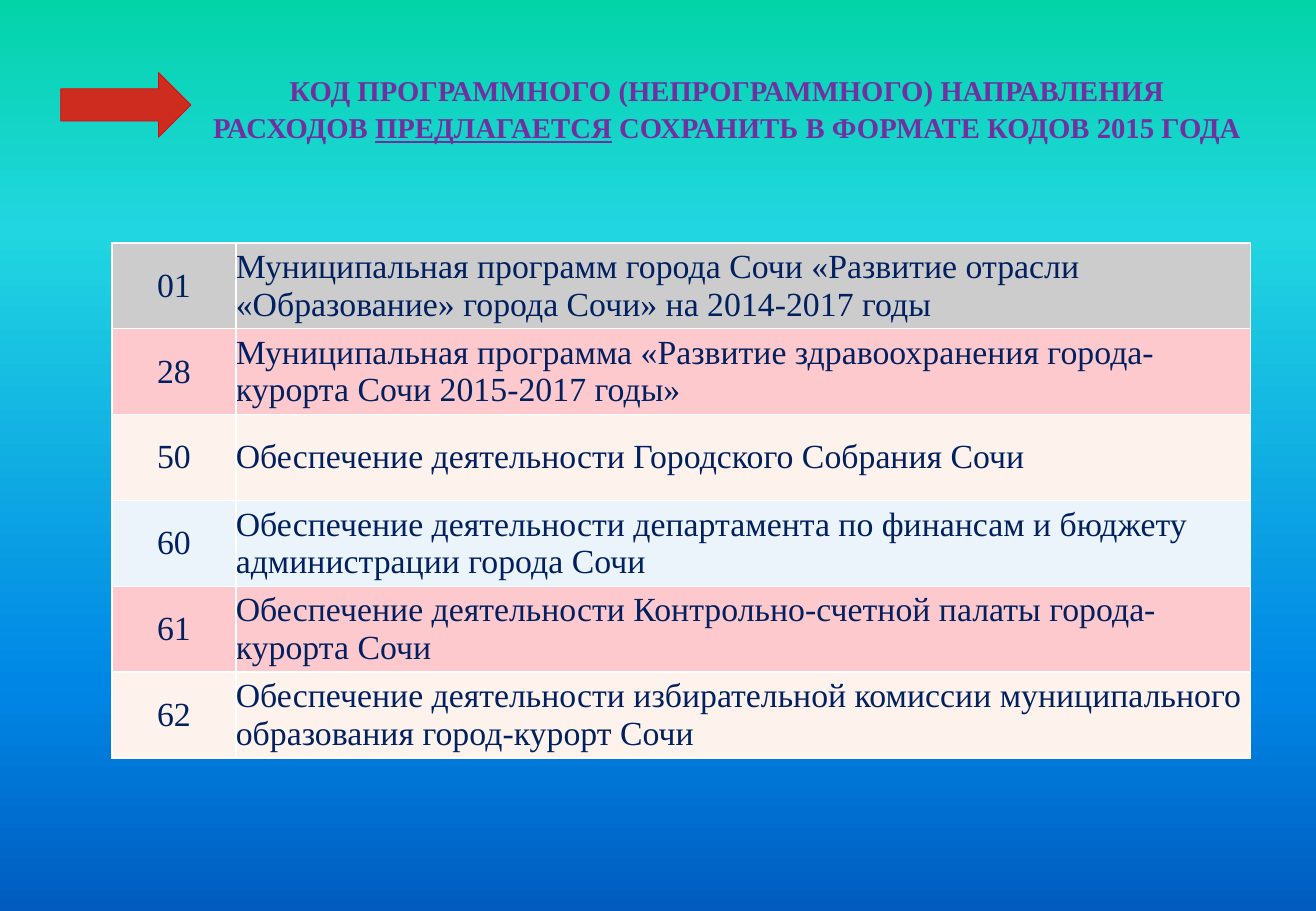
from lxml import etree
from pptx import Presentation
from pptx.dml.color import RGBColor
from pptx.enum.shapes import MSO_SHAPE
from pptx.enum.text import MSO_ANCHOR, MSO_AUTO_SIZE, PP_ALIGN
from pptx.oxml.ns import qn
from pptx.util import Cm, Pt

RIGHT_ARROW = MSO_SHAPE.RIGHT_ARROW
TOP, MIDDLE = MSO_ANCHOR.TOP, MSO_ANCHOR.MIDDLE
LEFT, CENTER = PP_ALIGN.LEFT, PP_ALIGN.CENTER
NO_AUTOFIT = MSO_AUTO_SIZE.NONE

# Content: title runs as (text, underlined), table rows as (code, name, tint)
TITLE = [
    ("КОД ПРОГРАММНОГО (НЕПРОГРАММНОГО) НАПРАВЛЕНИЯ РАСХОДОВ ", False),
    ("ПРЕДЛАГАЕТСЯ", True),
    (" СОХРАНИТЬ В ФОРМАТЕ КОДОВ 2015 ГОДА", False),
]
PROGRAMS = [
    ("01", "Муниципальная программ города Сочи «Развитие отрасли «Образование» города Сочи» на 2014-2017 годы", "grey"),
    ("28", "Муниципальная программа «Развитие здравоохранения города-курорта Сочи 2015-2017 годы»", "pink"),
    ("50", "Обеспечение деятельности Городского Собрания Сочи", "cream"),
    ("60", "Обеспечение деятельности департамента по финансам и бюджету администрации города Сочи", "blue"),
    ("61", "Обеспечение деятельности Контрольно-счетной палаты города-курорта Сочи", "pink"),
    ("62", "Обеспечение деятельности избирательной комиссии муниципального образования город-курорт Сочи", "cream"),
]

THEME = {
    "font": "Times New Roman",
    "title": "7030A0", "title_size": 17,
    "text": "002060", "text_size": 20,
    "arrow": "CE2C1F", "arrow_line": "E30613",
    "border": "FFFFFF",
    "background": [(0, "03D4A8"), (25, "21D6E0"), (75, "0087E6"), (100, "005CBF")],
    "grey": "CCCCCC", "pink": "FEC9CC", "cream": "FEF2ED", "blue": "EBF3FB",
}

# Geometry
SLIDE_SIZE = Cm(27.51), Cm(19.05)
TITLE_BOX = Cm(4.45), Cm(1.47), Cm(21.49), Cm(2.39)
ARROW_BOX = Cm(1.27), Cm(1.52), Cm(2.72), Cm(1.35)
TABLE_LEFT, TABLE_TOP = Cm(2.34), Cm(5.08)
COLUMN_WIDTHS = Cm(2.59), Cm(21.21)
ROW_HEIGHT = Cm(1.795)
NO_MARGINS = dict.fromkeys(("margin_left", "margin_top", "margin_right", "margin_bottom"), 0)


def color(name):
    return RGBColor.from_string(THEME[name])


def apply(target, values):
    for name, value in values.items():
        setattr(target, name, value)


def add_run(paragraph, text, role, **extra):
    run = paragraph.add_run()
    run.text = text
    apply(run.font, {"name": THEME["font"], "size": Pt(THEME[role + "_size"]), **extra})
    run.font.color.rgb = color(role)


def set_background(slide):
    fill = slide.background.fill
    fill.gradient()
    fill.gradient_angle = 270
    stops = next(slide.element.iter(qn("a:gsLst")))
    for stop in list(stops):
        stops.remove(stop)
    for percent, value in THEME["background"]:
        stop = etree.SubElement(stops, qn("a:gs"), pos=str(percent * 1000))
        etree.SubElement(stop, qn("a:srgbClr"), val=value)


def add_borders(cell):
    properties = cell._tc.get_or_add_tcPr()
    for position, side in enumerate(("a:lnL", "a:lnR", "a:lnT", "a:lnB")):
        line = etree.Element(qn(side), w=str(Pt(1)))
        solid = etree.SubElement(line, qn("a:solidFill"))
        etree.SubElement(solid, qn("a:srgbClr"), val=THEME["border"])
        properties.insert(position, line)


def add_title(slide):
    title = slide.shapes.title
    apply(title, dict(zip(("left", "top", "width", "height"), TITLE_BOX)))
    apply(title.text_frame, {**NO_MARGINS, "word_wrap": True, "auto_size": NO_AUTOFIT,
                             "vertical_anchor": TOP})
    paragraph = title.text_frame.paragraphs[0]
    apply(paragraph, {"alignment": CENTER, "space_after": Pt(3), "line_spacing": 1.08})
    for text, underlined in TITLE:
        add_run(paragraph, text, "title", bold=True, underline=underlined)


def add_program_table(slide):
    table = slide.shapes.add_table(len(PROGRAMS), len(COLUMN_WIDTHS), TABLE_LEFT, TABLE_TOP,
                                   sum(COLUMN_WIDTHS), ROW_HEIGHT * len(PROGRAMS)).table
    apply(table, {"first_row": False, "horz_banding": False})
    for column, width in zip(table.columns, COLUMN_WIDTHS):
        column.width = width
    for row, (code, name, tint) in zip(table.rows, PROGRAMS):
        row.height = ROW_HEIGHT
        for cell, text, alignment in zip(row.cells, (code, name), (CENTER, LEFT)):
            apply(cell, {**NO_MARGINS, "vertical_anchor": MIDDLE})
            cell.fill.solid()
            cell.fill.fore_color.rgb = color(tint)
            add_borders(cell)
            paragraph = cell.text_frame.paragraphs[0]
            paragraph.alignment = alignment
            add_run(paragraph, text, "text")


def add_arrow(slide):
    arrow = slide.shapes.add_shape(RIGHT_ARROW, *ARROW_BOX)
    arrow.shadow.inherit = False
    arrow.fill.solid()
    arrow.fill.fore_color.rgb = color("arrow")
    arrow.line.color.rgb = color("arrow_line")
    arrow.line.width = Pt(0.5)


def main():
    presentation = Presentation()
    presentation.slide_width, presentation.slide_height = SLIDE_SIZE
    slide = presentation.slides.add_slide(presentation.slide_layouts.get_by_name("Title Only"))
    set_background(slide)
    add_title(slide)
    add_program_table(slide)
    add_arrow(slide)
    presentation.save("out.pptx")


if __name__ == "__main__":
    main()
